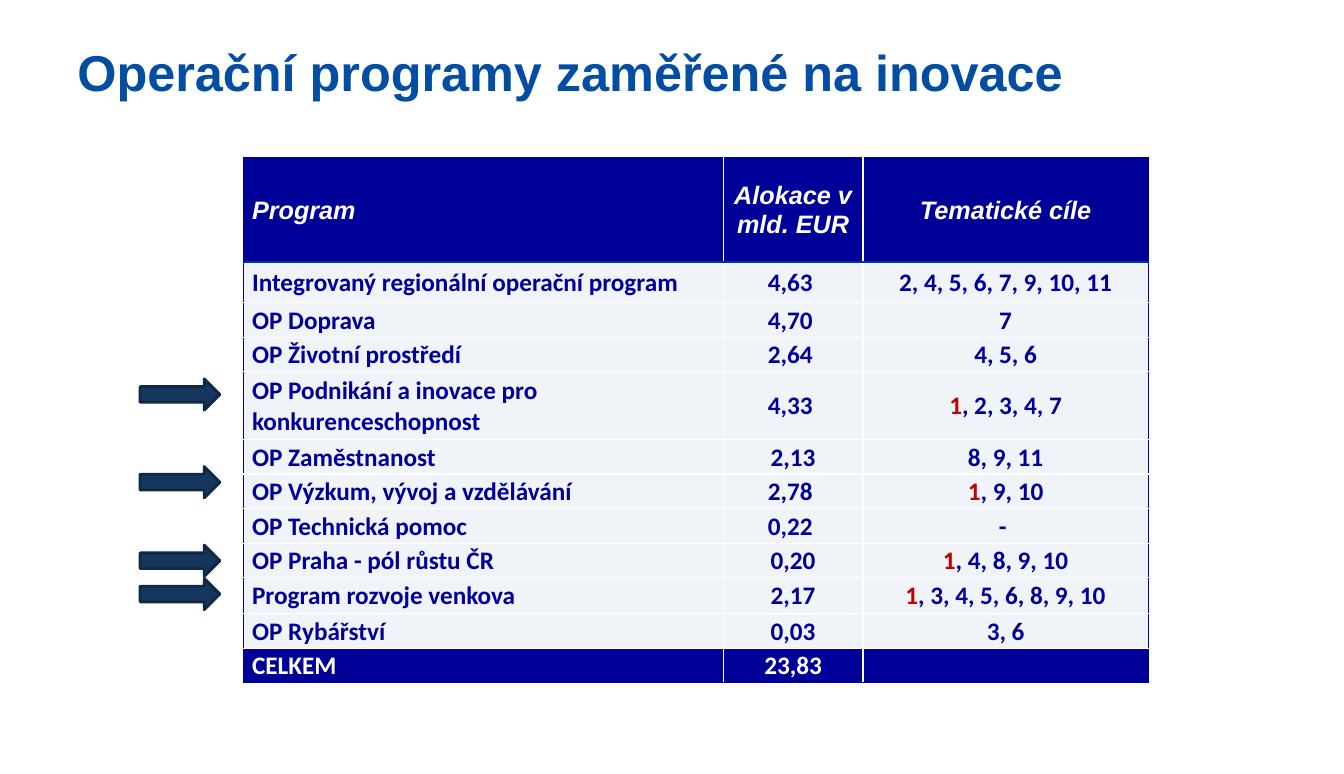
from lxml.etree import SubElement
from pptx import Presentation
from pptx.dml.color import RGBColor
from pptx.enum.shapes import MSO_SHAPE as Shape
from pptx.enum.text import MSO_ANCHOR as Anchor, PP_ALIGN as Align
from pptx.oxml.ns import qn
from pptx.util import Cm, Pt

NAVY, RULE, WHITE, PALE, RED = "000099", "003399", "FFFFFF", "F0F3F8", "C00000"
ROWS = [
    ("Program", "Alokace v mld. EUR", "Tematické cíle"),
    ("Integrovaný regionální operační program", "4,63 ", "2, 4, 5, 6, 7, 9, 10, 11"),
    ("OP Doprava", "4,70 ", "7"),
    ("OP Životní prostředí", "2,64 ", "4, 5, 6"),
    ("OP Podnikání a inovace pro konkurenceschopnost", "4,33 ", "1, 2, 3, 4, 7"),
    ("OP Zaměstnanost", "2,13", "8, 9, 11"),
    ("OP Výzkum, vývoj a vzdělávání", "2,78 ", "1, 9, 10"),
    ("OP Technická pomoc", "0,22 ", "- "),
    ("OP Praha - pól růstu ČR", "0,20", "1, 4, 8, 9, 10"),
    ("Program rozvoje venkova", "2,17", "1, 3, 4, 5, 6, 8, 9, 10"),
    ("OP Rybářství", "0,03", "3, 6"),
    ("CELKEM", "23,83", ""),
]
COLUMN_WIDTHS = [12.09, 3.52, 7.19]
ROW_HEIGHT = 0.87
TALL_ROWS = {0: 2.65, 1: 1.02, 4: 1.71, 9: 0.91}
ARROW_TOPS = [9.55, 11.76, 13.74, 14.58]


def rgb(value):
    return RGBColor.from_string(value)


def style_span(span, size, color, name, italic=False):
    font = span.font
    font.size, font.name, font.bold, font.italic = Pt(size), name, True, italic
    font.color.rgb = rgb(color)


def set_borders(cell, borders):
    """Draw (colour, points) borders in the order left, right, top, bottom."""
    properties = cell._tc.get_or_add_tcPr()
    for index, (side, (color, width)) in enumerate(zip("LRTB", borders)):
        line = properties.makeelement(qn(f"a:ln{side}"), {"w": str(Pt(width))})
        fill = SubElement(line, qn("a:solidFill"))
        SubElement(fill, qn("a:srgbClr"), val=color)
        properties.insert(index, line)


def add_title(page, left, top, width, height):
    box = page.shapes.add_textbox(Cm(left), Cm(top), Cm(width), Cm(height))
    frame = box.text_frame
    frame.word_wrap = True
    frame.margin_top = Cm(0.25)
    frame.text = "Operační programy zaměřené na inovace"
    style_span(frame.paragraphs[0].runs[0], 36, "034EA2", "Arial")


def fill_cell(cell, text, row, column):
    last_row, last_column = len(ROWS) - 1, len(COLUMN_WIDTHS) - 1
    dark = row in (0, last_row)
    cell.fill.solid()
    cell.fill.fore_color.rgb = rgb(NAVY if dark else PALE)
    cell.vertical_anchor = Anchor.MIDDLE
    cell.margin_left = Cm(0.22 if column == 0 else 0.03)
    cell.margin_right = cell.margin_top = Cm(0.03)
    cell.margin_bottom = 0

    # Navy outside edge, white grid, blue rule under the header
    outer, inner, rule = (NAVY, 1), (WHITE, 1), (RULE, 1.5)
    set_borders(cell, [
        outer if column == 0 else inner,
        outer if column == last_column else inner,
        {0: outer, 1: rule}.get(row, inner),
        {0: rule, last_row: outer}.get(row, inner),
    ])

    # Objective 1 stands out in red
    para = cell.text_frame.paragraphs[0]
    para.alignment = Align.LEFT if column == 0 else Align.CENTER
    highlighted = column == last_column and text.startswith("1,")
    parts = [text[:1], text[1:]] if highlighted else [text]
    for index, part in enumerate(parts):
        if part:
            span = para.add_run()
            span.text = part
            color = RED if highlighted and index == 0 else WHITE if dark else NAVY
            style_span(span, 18, color, "Calibri" if row else "Arial", row == 0)


def add_program_table(page, left, top):
    heights = [TALL_ROWS.get(row, ROW_HEIGHT) for row in range(len(ROWS))]
    table = page.shapes.add_table(
        len(ROWS), len(COLUMN_WIDTHS), Cm(left), Cm(top),
        Cm(sum(COLUMN_WIDTHS)), Cm(sum(heights))).table
    table.first_row = table.horz_banding = False
    for column, width in zip(table.columns, COLUMN_WIDTHS):
        column.width = Cm(width)
    for row, (height, texts) in enumerate(zip(heights, ROWS)):
        table.rows[row].height = Cm(height)
        for column, text in enumerate(texts):
            fill_cell(table.cell(row, column), text, row, column)


def add_arrows(page, left, width, height):
    for top in ARROW_TOPS:
        arrow = page.shapes.add_shape(
            Shape.RIGHT_ARROW, Cm(left), Cm(top), Cm(width), Cm(height))
        arrow.shadow.inherit = False
        arrow.fill.solid()
        arrow.fill.fore_color.rgb = rgb("17365D")
        arrow.line.color.rgb = rgb("112845")
        arrow.line.width = Pt(2)


def main():
    deck = Presentation()
    deck.slide_width, deck.slide_height = Cm(33.86), Cm(19.51)
    page = deck.slides.add_slide(deck.slide_layouts[6])
    add_title(page, 1.7, 0.79, 30.48, 3.25)
    add_program_table(page, 6.13, 3.96)
    add_arrows(page, 3.53, 2.01, 0.79)
    deck.save("out.pptx")


if __name__ == "__main__":
    main()
